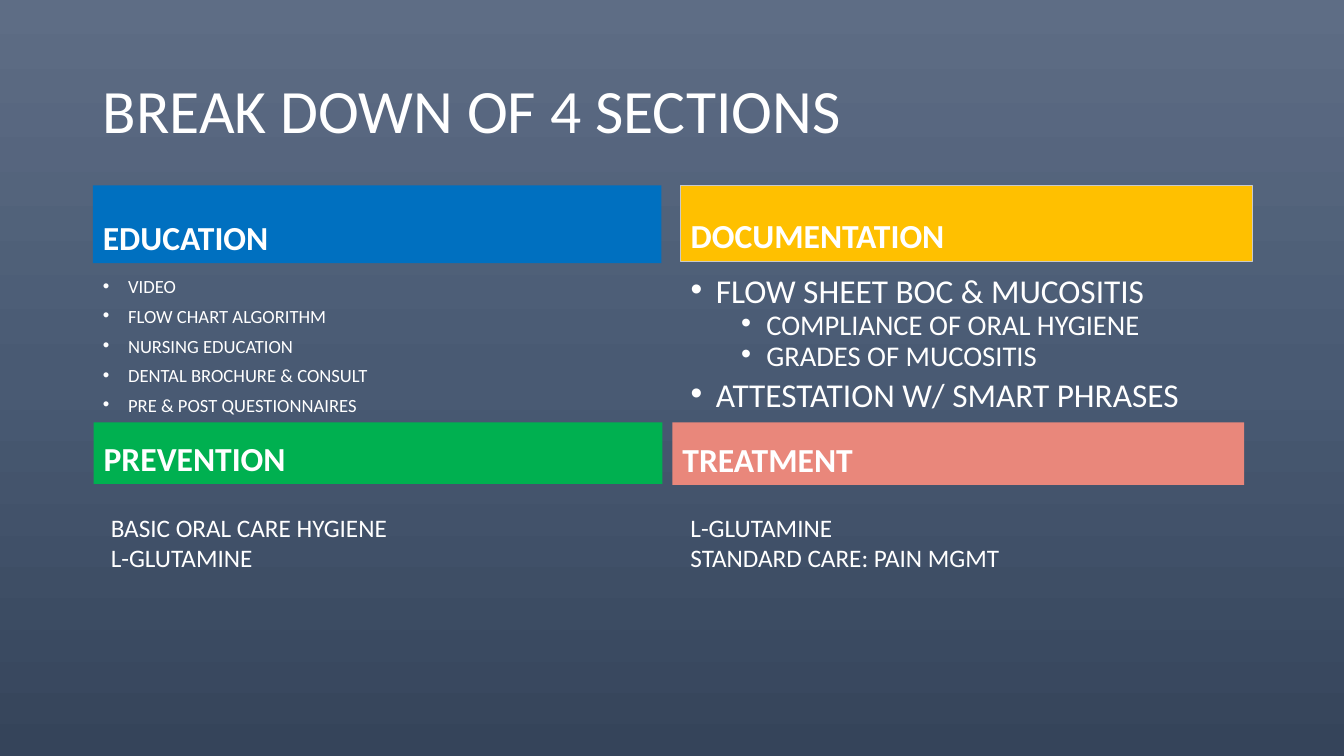
from copy import deepcopy

from lxml import etree
from pptx import Presentation
from pptx.dml.color import RGBColor
from pptx.enum.shapes import MSO_SHAPE as Shape
from pptx.enum.text import MSO_ANCHOR as Anchor, MSO_AUTO_SIZE as AutoSize, PP_ALIGN as Align
from pptx.oxml.ns import qn
from pptx.util import Inches, Pt

WHITE = RGBColor(0xFF, 0xFF, 0xFF)
BLUE = RGBColor(0x00, 0x70, 0xC0)
AMBER = RGBColor(0xFF, 0xC0, 0x00)
GREEN = RGBColor(0x00, 0xB0, 0x50)
CORAL = RGBColor(0xE9, 0x87, 0x7B)
SILVER = RGBColor(0xC9, 0xC9, 0xC9)
SKY = RGBColor(0x5E, 0x6D, 0x85)
SLATE = RGBColor(0x49, 0x5A, 0x73)
NIGHT = RGBColor(0x35, 0x44, 0x5A)

COMPARISON_LAYOUT = 4
FONT = "Calibri"


def place(shape, box):
    for name, value in zip(("left", "top", "width", "height"), box):
        setattr(shape, name, Inches(value))


def add_bullet(para, level):
    props = para._p.get_or_add_pPr()
    props.set("marL", str(Inches(0.25 + 0.5 * level)))
    props.set("indent", str(Inches(-0.25)))
    etree.SubElement(props, qn("a:buFont")).set("typeface", "Arial")
    etree.SubElement(props, qn("a:buChar")).set("char", "•")


def write(shape, lines, anchor=Anchor.TOP, spacing=1.0, before=(0, 0), bullets=False, bold=False):
    """Write lines of (text, size, level) into a shape."""
    frame = shape.text_frame
    frame_format = {"word_wrap": True, "auto_size": AutoSize.NONE, "vertical_anchor": anchor}
    for name, value in frame_format.items():
        setattr(frame, name, value)
    for index, (text, size, level) in enumerate(lines):
        para = frame.paragraphs[0] if index == 0 else frame.add_paragraph()
        para_format = {"level": level, "alignment": Align.LEFT, "line_spacing": spacing,
                       "space_before": Pt(before[level] if index else 0)}
        for name, value in para_format.items():
            setattr(para, name, value)
        if bullets:
            add_bullet(para, level)
        span = para.add_run()
        span.text = text
        for name, value in {"name": FONT, "size": Pt(size), "bold": bold}.items():
            setattr(span.font, name, value)
        span.font.color.rgb = WHITE


def paint_background(page):
    fill = page.background.fill
    fill.gradient()
    fill.gradient_angle = 270
    stop_list = page.element.find(".//" + qn("a:gsLst"))
    stop_list.insert(1, deepcopy(stop_list[0]))
    for stop, position, color in zip(fill.gradient_stops, (0, 0.5, 1), (SKY, SLATE, NIGHT)):
        stop.position = position
        stop.color.rgb = color


def title_region(page, box):
    place(page.shapes.title, box)
    write(page.shapes.title, [("BREAK DOWN OF 4 SECTIONS", 44, 0)], Anchor.MIDDLE, 0.9)


def header_band(band, text, color):
    band.fill.solid()
    band.fill.fore_color.rgb = color
    write(band, [(text, 24, 0)], Anchor.BOTTOM, 0.9, bold=True)


def list_section(header, body, box, band_height, title, color, lines):
    """Coloured header above a bulleted list, both in placeholders."""
    left, top, width, height = box
    place(header, (left, top, width, band_height))
    header_band(header, title, color)
    place(body, (left, top + 0.9, width, height - 0.9))
    write(body, lines, spacing=0.7, before=(10, 5), bullets=True)


def note_section(page, box, band_height, title, color, note_box, lines):
    """Coloured header above plain lines; note_box is relative to the section."""
    left, top, width, _ = box
    band = page.shapes.add_shape(
        Shape.RECTANGLE, *map(Inches, (left, top, width, band_height)))
    band.shadow.inherit = False
    band.line.fill.background()
    header_band(band, title, color)
    shift, drop, note_width, note_height = note_box
    note = page.shapes.add_textbox(
        *map(Inches, (left + shift, top + drop, note_width, note_height)))
    write(note, [(line, 18, 0) for line in lines])


def build_sections_slide(deck):
    page = deck.slides.add_slide(deck.slide_layouts[COMPARISON_LAYOUT])
    holders = {holder.placeholder_format.idx: holder for holder in page.placeholders}
    paint_background(page)
    title_region(page, (0.92, 0.4, 11.5, 1.45))

    # Upper row: bulleted lists
    education = ["VIDEO", "FLOW CHART ALGORITHM", "NURSING EDUCATION",
                 "DENTAL BROCHURE & CONSULT", "PRE & POST QUESTIONNAIRES"]
    list_section(holders[1], holders[2], (0.92, 1.84, 5.64, 2.35), 0.77,
                 "EDUCATION", BLUE, [(line, 13.3, 0) for line in education])
    documentation = [("FLOW SHEET BOC & MUCOSITIS", 23.8, 0),
                     ("COMPLIANCE OF ORAL HYGIENE", 20.4, 1),
                     ("GRADES OF MUCOSITIS", 20.4, 1),
                     ("ATTESTATION W/ SMART PHRASES", 23.8, 0)]
    list_section(holders[3], holders[4], (6.75, 1.84, 5.67, 2.34), 0.75,
                 "DOCUMENTATION", AMBER, documentation)
    holders[3].line.color.rgb = SILVER
    holders[3].line.width = Pt(0.75)

    # Lower row: plain notes
    note_section(page, (0.93, 4.19, 5.64, 2.15), 0.61, "PREVENTION", GREEN,
                 (0.07, 0.84, 5.39, 1.31), ["BASIC ORAL CARE HYGIENE", "L-GLUTAMINE"])
    note_section(page, (6.67, 4.19, 5.67, 1.85), 0.62, "TREATMENT", CORAL,
                 (0.08, 0.84, 5.67, 1.01), ["L-GLUTAMINE", "STANDARD CARE: PAIN MGMT"])


def main():
    deck = Presentation()
    deck.slide_width, deck.slide_height = Inches(13.33), Inches(7.5)
    build_sections_slide(deck)
    deck.save("out.pptx")


if __name__ == "__main__":
    main()
